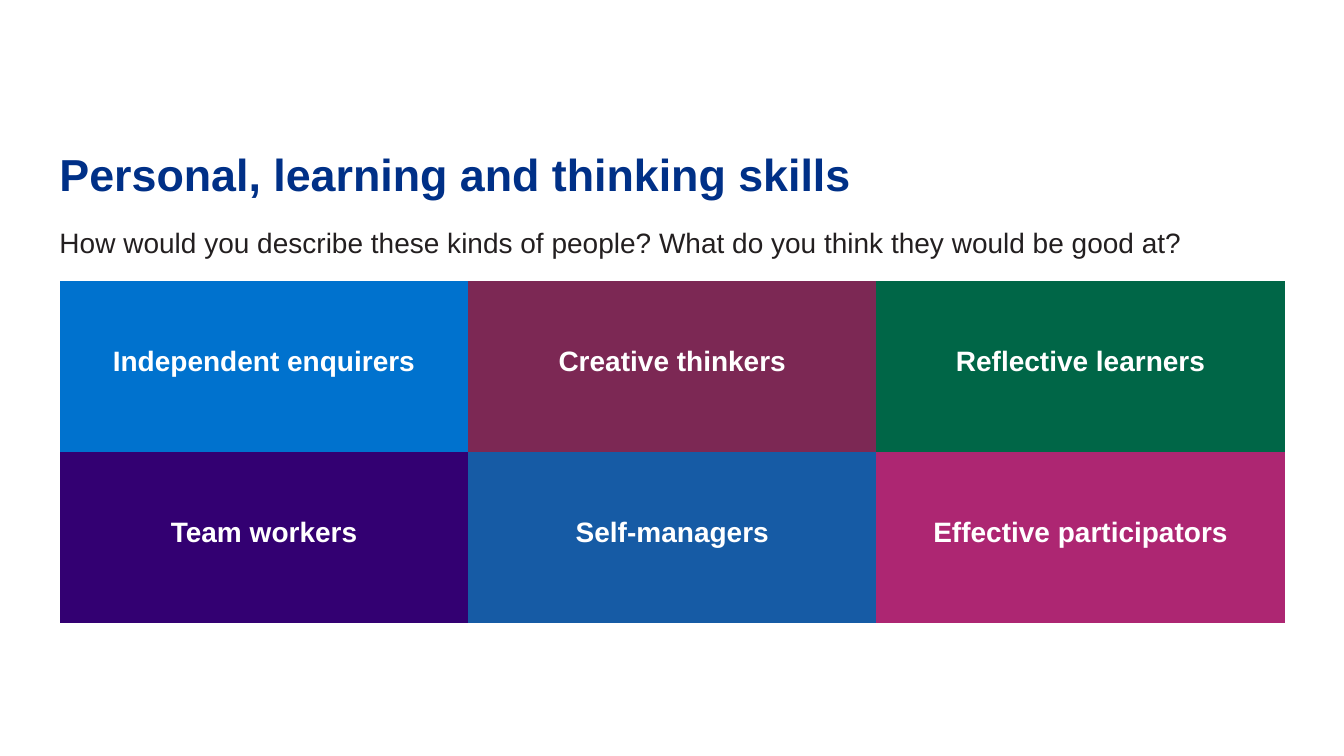
from pptx import Presentation
from pptx.dml.color import RGBColor
from pptx.enum.text import MSO_ANCHOR, PP_ALIGN
from pptx.oxml.ns import qn
from pptx.util import Cm, Pt

CENTER = PP_ALIGN.CENTER
LEFT = PP_ALIGN.LEFT
MIDDLE = MSO_ANCHOR.MIDDLE
NO_GRID_STYLE = "{2D5ABB26-0587-4C30-8999-92F81FD0307C}"

COLORS = {
    "title": "003087",
    "body": "231F20",
    "label": "FFFFFF",
    "blue": "0072CE",
    "plum": "7C2854",
    "green": "006647",
    "violet": "330072",
    "steel": "165BA5",
    "pink": "AD2672",
}

SKILLS = [
    [("Independent enquirers", "blue"), ("Creative thinkers", "plum"),
     ("Reflective learners", "green")],
    [("Team workers", "violet"), ("Self-managers", "steel"),
     ("Effective participators", "pink")],
]


class SkillsSlide:
    font_name = "Arial"

    def __init__(self, presentation):
        self.slide = presentation.slides.add_slide(presentation.slide_layouts[6])

    def add_run(self, paragraph, text, size, color, bold=False, alignment=LEFT):
        paragraph.alignment = alignment
        run = paragraph.add_run()
        run.text = text
        run.font.name = self.font_name
        run.font.size = Pt(size)
        run.font.bold = bold
        run.font.color.rgb = RGBColor.from_string(COLORS[color])

    def add_text(self, text, left, top, width, height, size, color, bold=False):
        shape = self.slide.shapes.add_textbox(Cm(left), Cm(top), Cm(width), Cm(height))
        frame = shape.text_frame
        frame.word_wrap = True
        frame.margin_left = frame.margin_right = frame.margin_bottom = 0
        frame.margin_top = Cm(0.03)
        self.add_run(frame.paragraphs[0], text, size, color, bold)

    def add_color_table(self, rows, left, top, column_width, row_height):
        """Add a borderless table whose cells are (label, fill colour) pairs."""
        column_count = len(rows[0])
        table = self.slide.shapes.add_table(
            len(rows), column_count, Cm(left), Cm(top),
            Cm(column_width * column_count), Cm(row_height * len(rows))).table
        table.first_row = table.horz_banding = False
        table._tbl.tblPr.find(qn("a:tableStyleId")).text = NO_GRID_STYLE
        for column in table.columns:
            column.width = Cm(column_width)
        for row_index, row in enumerate(rows):
            table.rows[row_index].height = Cm(row_height)
            for column_index, (label, fill) in enumerate(row):
                cell = table.cell(row_index, column_index)
                cell.fill.solid()
                cell.fill.fore_color.rgb = RGBColor.from_string(COLORS[fill])
                cell.margin_left = cell.margin_right = cell.margin_top = 0
                cell.margin_bottom = Cm(0.25)
                cell.vertical_anchor = MIDDLE
                self.add_run(cell.text_frame.paragraphs[0], label, 20, "label",
                             bold=True, alignment=CENTER)


def main():
    presentation = Presentation()
    presentation.slide_width = Cm(33.87)
    presentation.slide_height = Cm(19.05)
    slide = SkillsSlide(presentation)
    slide.add_text("Personal, learning and thinking skills",
                   1.5, 3.68, 30.9, 1.42, 32, "title", bold=True)
    slide.add_text("How would you describe these kinds of people? "
                   "What do you think they would be good at?",
                   1.5, 5.66, 30.9, 0.92, 20, "body")
    slide.add_color_table(SKILLS, 1.51, 7.09, 10.29, 4.3)
    presentation.save("out.pptx")


if __name__ == "__main__":
    main()
